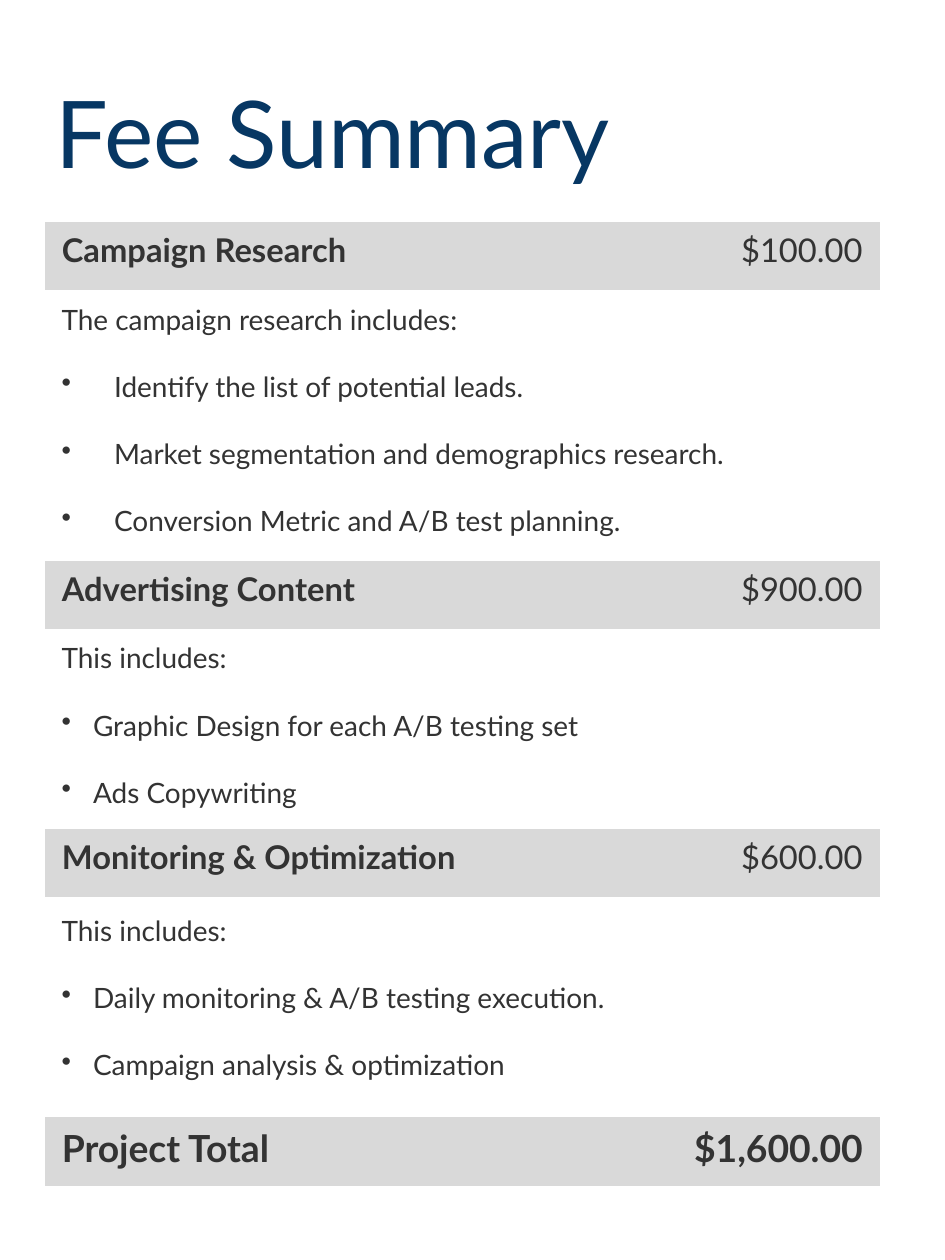
from lxml import etree
from pptx import Presentation
from pptx.dml.color import RGBColor
from pptx.enum.text import MSO_ANCHOR, MSO_AUTO_SIZE, PP_ALIGN
from pptx.oxml.ns import qn
from pptx.util import Pt

LEFT, RIGHT = PP_ALIGN.LEFT, PP_ALIGN.RIGHT
TOP = MSO_ANCHOR.TOP
FIXED, GROW = MSO_AUTO_SIZE.NONE, MSO_AUTO_SIZE.SHAPE_TO_FIT_TEXT
NO_STYLE = "{2D5ABB26-0587-4C30-8999-92F81FD0307C}"
FACE, INK, NAVY, GREY = "Lato", "333333", "073763", "D9D9D9"
EDGE, WIDTH, BAND = 19.3, 357.7, 29.2
SPLIT = 222.5
LINE = 14.4

PARTS = [
    (95.1, "Campaign Research", "$100.00", 126, WIDTH, 22.5,
     "The campaign research includes:",
     ["Identify the list of potential leads.",
      "Market segmentation and demographics research.",
      "Conversion Metric and A/B test planning."]),
    (240.3, "Advertising Content", "$900.00", 271.2, WIDTH, 13.5,
     "This includes:",
     ["Graphic Design for each A/B testing set", "Ads Copywriting"]),
    (355.1, "Monitoring & Optimization", "$600.00", 388, 321.7, 13.5,
     "This includes:",
     ["Daily monitoring & A/B testing execution.",
      "Campaign analysis & optimization"]),
]


def paint(code):
    """Return the colour for a hex string."""
    return RGBColor.from_string(code)


def style(para, size, color=INK, bold=False, align=LEFT):
    """Set the font and alignment of a paragraph."""
    font = para.font
    font.name, font.size, font.bold = FACE, Pt(size), bold
    font.color.rgb = paint(color)
    para.alignment = align


def add_head(slide, text, box):
    """Place the title in its box."""
    head = slide.shapes.title
    head.left, head.top, head.width, head.height = map(Pt, box)
    frame = head.text_frame
    frame.text = text
    frame.auto_size, frame.vertical_anchor = FIXED, TOP
    frame.margin_left = frame.margin_right = Pt(4.5)
    frame.margin_top = frame.margin_bottom = Pt(2.25)
    para = frame.paragraphs[0]
    style(para, 40, NAVY)
    para.line_spacing = 1.22


def add_fee(slide, label, price, box, size=14, strong=False):
    """Place a one-row table with a label and its price."""
    shape = slide.shapes.add_table(1, 2, *map(Pt, box))
    table = shape.table
    table.first_row = table.horz_banding = False
    next(shape.element.iter(qn("a:tableStyleId"))).text = NO_STYLE
    table.columns[0].width = Pt(SPLIT)
    table.columns[1].width = Pt(box[2] - SPLIT)
    looks = [(label, True, LEFT), (price, strong, RIGHT)]
    for cell, (text, bold, align) in zip(table.rows[0].cells, looks):
        cell.text = text
        cell.fill.solid()
        cell.fill.fore_color.rgb = paint(GREY)
        style(cell.text_frame.paragraphs[0], size, bold=bold, align=align)


def add_bullet(para, indent):
    """Give a paragraph a bullet with a hanging indent."""
    props = para._p.get_or_add_pPr()
    props.set("marL", str(Pt(indent)))
    props.set("indent", str(-Pt(indent)))
    etree.SubElement(props, qn("a:buChar"), char="•")


def add_scope(slide, intro, items, indent, box):
    """Place an intro line and its bullets in a text box."""
    frame = slide.shapes.add_textbox(*map(Pt, box)).text_frame
    frame.word_wrap, frame.auto_size = True, GROW
    frame.text = "\n".join([intro, *items])
    for i, para in enumerate(frame.paragraphs):
        style(para, 12)
        if i:
            para.space_before = Pt(LINE)
            add_bullet(para, indent)


def build_fees(deck):
    """Build the fee summary slide."""
    slide = deck.slides.add_slide(deck.slide_layouts[5])
    add_head(slide, "Fee Summary", (EDGE, 19.5, WIDTH, 55.5))
    for top, label, price, start, width, indent, intro, items in PARTS:
        add_fee(slide, label, price, (EDGE, top, WIDTH, BAND))
        height = LINE * (2 * len(items) + 1) + 7.2
        add_scope(slide, intro, items, indent, (EDGE, start, width, height))
    add_fee(slide, "Project Total", "$1,600.00",
            (EDGE, 478.9, WIDTH, BAND), 16, True)


def main():
    """Create and save the deck."""
    deck = Presentation()
    deck.slide_width, deck.slide_height = Pt(405), Pt(540)
    build_fees(deck)
    deck.save("out.pptx")


if __name__ == "__main__":
    main()
